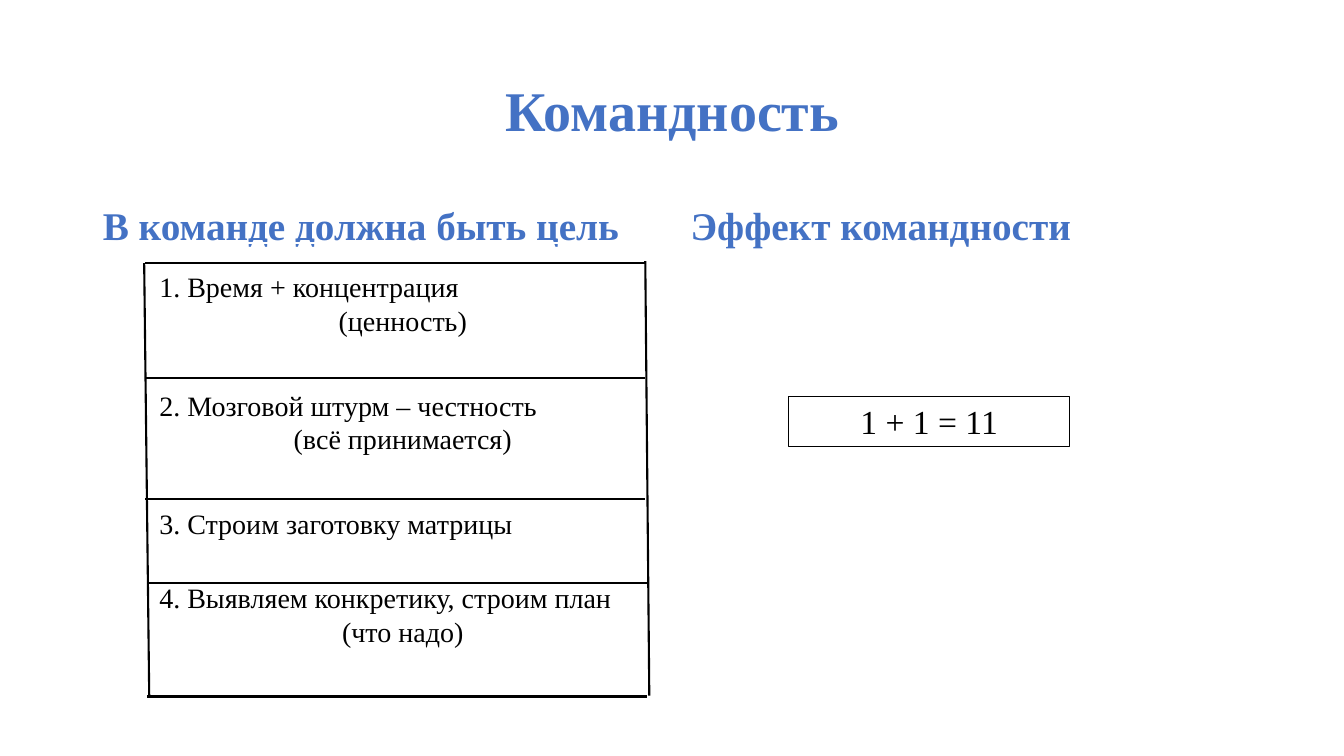
from typing import NamedTuple

from lxml.etree import SubElement
from pptx import Presentation
from pptx.dml.color import RGBColor
from pptx.enum.shapes import MSO_CONNECTOR, MSO_SHAPE
from pptx.enum.text import MSO_ANCHOR, MSO_AUTO_SIZE, PP_ALIGN
from pptx.oxml.ns import qn
from pptx.util import Inches, Pt

COLORS = {"heading": "4472C4", "text": "000000", "rule": "000000", "border": "FFFFFF"}
FONT = "Times New Roman"


class Box(NamedTuple):
    left: float
    top: float
    width: float
    height: float


class Step(NamedTuple):
    text: str
    note: str
    row_height: float
    top_margin: float


class Rule(NamedTuple):
    x1: float
    y1: float
    x2: float
    y2: float


TITLE_BOX = Box(0.92, 0.4, 11.5, 1.45)
HEADINGS = {
    "В команде должна быть цель": Box(0.92, 2, 5.67, 4.76),
    "Эффект командности": Box(6.75, 2, 5.67, 4.76),
}
STEPS_BOX = Box(1.51, 2.41, 4.97, 4.54)
STEPS = [
    Step("1. Время + концентрация", "(ценность)", 1.18, 0.29),
    Step("2. Мозговой штурм – честность", "(всё принимается)", 1.18, 0.29),
    Step("3. Строим заготовку матрицы", "", 1.0, 0.28),
    Step("4. Выявляем конкретику, строим план", "(что надо)", 1.18, 0.02),
]
RULE_LENGTH = 4.96
ROW_RULES = [(1.44, 3.75), (1.44, 4.95), (1.46, 5.78), (1.44, 2.61), (1.46, 6.91)]
RULES = [Rule(x, y, x + RULE_LENGTH, y) for x, y in ROW_RULES] + [
    Rule(6.4, 2.59, 6.44, 6.9),
    Rule(1.43, 2.61, 1.48, 6.9),
]
EFFECT_BOX = Box(7.82, 3.93, 2.79, 0.5)


def color(name: str) -> RGBColor:
    return RGBColor.from_string(COLORS[name])


def inches(box: Box) -> list:
    return [Inches(length) for length in box]


def write(paragraph, text: str, size: float, color_name: str, bold: bool = False,
          align: PP_ALIGN = PP_ALIGN.LEFT) -> None:
    paragraph.text = text
    paragraph.alignment = align
    font = paragraph.font
    font.name, font.size, font.bold = FONT, Pt(size), bold
    font.color.rgb = color(color_name)


def fill_placeholder(shape, box: Box, text: str, size: float, align: PP_ALIGN) -> None:
    shape.left, shape.top, shape.width, shape.height = inches(box)
    shape.text_frame.auto_size = MSO_AUTO_SIZE.NONE
    paragraph = shape.text_frame.paragraphs[0]
    properties = paragraph._p.get_or_add_pPr()
    properties.set("marL", "0")
    properties.set("indent", "0")
    SubElement(properties, qn("a:buNone"))
    write(paragraph, text, size, "heading", True, align)
    paragraph.line_spacing = 0.9
    paragraph.space_before = Pt(0)


def set_borders(cell) -> None:
    properties = cell._tc.get_or_add_tcPr()
    for side in ("a:lnL", "a:lnR", "a:lnT", "a:lnB"):
        line = SubElement(properties, qn(side), w=str(Pt(1)))
        fill = SubElement(line, qn("a:solidFill"))
        SubElement(fill, qn("a:srgbClr"), val=COLORS["border"])


def add_steps(slide) -> None:
    table = slide.shapes.add_table(len(STEPS), 1, *inches(STEPS_BOX)).table
    table.first_row = table.horz_banding = False
    for row, step in zip(table.rows, STEPS):
        row.height = Inches(step.row_height)
        cell = row.cells[0]
        set_borders(cell)
        cell.fill.background()
        cell.margin_left = cell.margin_right = Inches(0.07)
        cell.margin_top, cell.margin_bottom = Inches(step.top_margin), 0
        paragraph = cell.text_frame.paragraphs[0]
        write(paragraph, step.text, 20, "text")
        if step.note:
            paragraph.space_after = Pt(2)
            note = cell.text_frame.add_paragraph()
            write(note, step.note, 20, "text", align=PP_ALIGN.CENTER)


def add_rule(slide, rule: Rule) -> None:
    connector = slide.shapes.add_connector(
        MSO_CONNECTOR.STRAIGHT, *[Inches(length) for length in rule])
    connector.line.color.rgb = color("rule")
    connector.line.width = Pt(1.5)
    SubElement(connector._element.spPr, qn("a:effectLst"))


def add_effect(slide) -> None:
    shape = slide.shapes.add_shape(MSO_SHAPE.RECTANGLE, *inches(EFFECT_BOX))
    shape.shadow.inherit = False
    shape.fill.background()
    shape.line.color.rgb = color("rule")
    shape.line.width = Pt(0.75)
    shape.text_frame.vertical_anchor = MSO_ANCHOR.MIDDLE
    write(shape.text_frame.paragraphs[0], "1 + 1 = 11", 24, "text", align=PP_ALIGN.CENTER)


def main() -> None:
    presentation = Presentation()
    presentation.slide_width, presentation.slide_height = Inches(13.33), Inches(7.5)
    slide = presentation.slides.add_slide(presentation.slide_layouts.get_by_name("Two Content"))
    title, *bodies = slide.placeholders
    fill_placeholder(title, TITLE_BOX, "Командность", 40, PP_ALIGN.CENTER)
    title.text_frame.vertical_anchor = MSO_ANCHOR.MIDDLE
    for body, (text, box) in zip(bodies, HEADINGS.items()):
        fill_placeholder(body, box, text, 28, PP_ALIGN.LEFT)
    add_steps(slide)
    for rule in RULES:
        add_rule(slide, rule)
    add_effect(slide)
    presentation.save("out.pptx")


if __name__ == "__main__":
    main()
